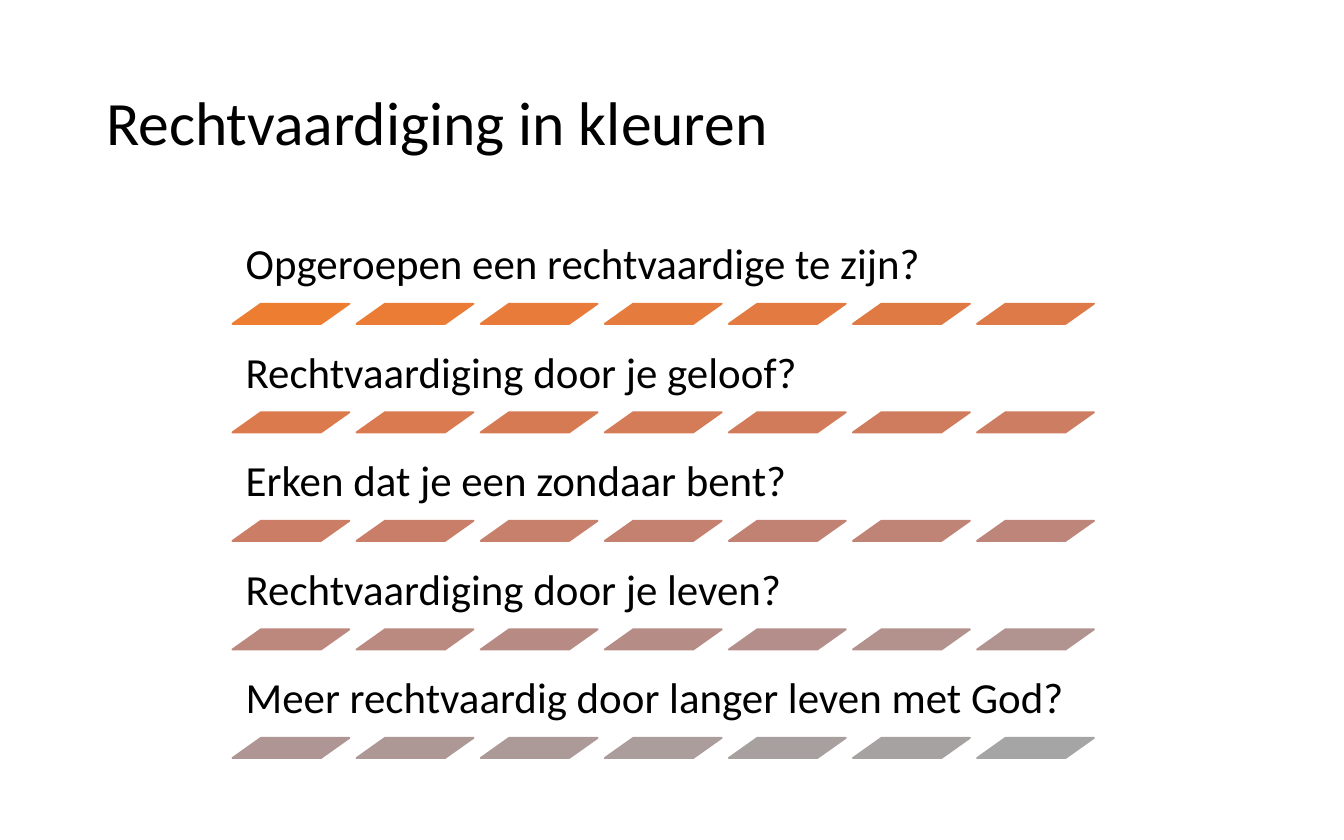
from colorsys import hls_to_rgb, rgb_to_hls

from pptx import Presentation
from pptx.dml.color import RGBColor
from pptx.enum.shapes import MSO_SHAPE
from pptx.enum.text import MSO_ANCHOR, MSO_AUTO_SIZE, PP_ALIGN
from pptx.util import Inches, Pt

TITLE = "Rechtvaardiging in kleuren"
QUESTIONS = [
    "Opgeroepen een rechtvaardige te zijn?",
    "Rechtvaardiging door je geloof?",
    "Erken dat je een zondaar bent?",
    "Rechtvaardiging door je leven?",
    "Meer rechtvaardig door langer leven met God?",
]
BLACK = RGBColor(0x00, 0x00, 0x00)
ORANGE = RGBColor(0xED, 0x7D, 0x31)
GRAY = RGBColor(0xA5, 0xA5, 0xA5)

LEFT, TOP, LAST_TOP = 1.73, 1.66, 4.89
TEXT_W, TEXT_H = 6.53, 0.59
BARS, LAST_BAR_LEFT = 7, 7.27
BAR_W, BAR_H, BAR_OFFSET = 0.87, 0.15, 0.6
ROW_STEP = (LAST_TOP - TOP) / (len(QUESTIONS) - 1)
BAR_STEP = (LAST_BAR_LEFT - LEFT) / (BARS - 1)


def blend(t):
    """Colour at fraction t from orange to gray, mixed in HLS."""
    start, end = (rgb_to_hls(*(c / 255 for c in rgb)) for rgb in (ORANGE, GRAY))
    mixed = hls_to_rgb(*(a + (b - a) * t for a, b in zip(start, end)))
    return RGBColor(*(round(c * 255) for c in mixed))


def write(tf, text, size, anchor):
    tf.auto_size = MSO_AUTO_SIZE.NONE
    tf.word_wrap = True
    tf.vertical_anchor = anchor
    tf.text = text
    p = tf.paragraphs[0]
    p.alignment = PP_ALIGN.LEFT
    p.line_spacing = 0.9
    font = p.runs[0].font
    font.name, font.size = "Calibri", Pt(size)
    font.color.rgb = BLACK


def add_bar(s, left, top, color):
    sp = s.shapes.add_shape(MSO_SHAPE.PARALLELOGRAM, Inches(left), Inches(top),
                            Inches(BAR_W), Inches(BAR_H))
    sp.adjustments[0] = 1.41
    sp.shadow.inherit = False
    sp.fill.solid()
    sp.fill.fore_color.rgb = color
    sp.line.color.rgb = color
    sp.line.width = Pt(1)


prs = Presentation()
prs.slide_width, prs.slide_height = Inches(10), Inches(6.25)
s = prs.slides.add_slide(prs.slide_layouts[5])

title = s.shapes.title
title.left, title.top = Inches(0.69), Inches(0.33)
title.width, title.height = Inches(8.62), Inches(1.21)
write(title.text_frame, TITLE, 33, MSO_ANCHOR.MIDDLE)

for row, question in enumerate(QUESTIONS):
    top = TOP + row * ROW_STEP
    box = s.shapes.add_textbox(Inches(LEFT), Inches(top), Inches(TEXT_W), Inches(TEXT_H))
    tf = box.text_frame
    tf.margin_top = tf.margin_bottom = Inches(0.1)
    write(tf, question, 23, MSO_ANCHOR.BOTTOM)
    for col in range(BARS):
        t = (row * BARS + col) / (len(QUESTIONS) * BARS - 1)
        add_bar(s, LEFT + col * BAR_STEP, top + BAR_OFFSET, blend(t))

prs.save("out.pptx")
